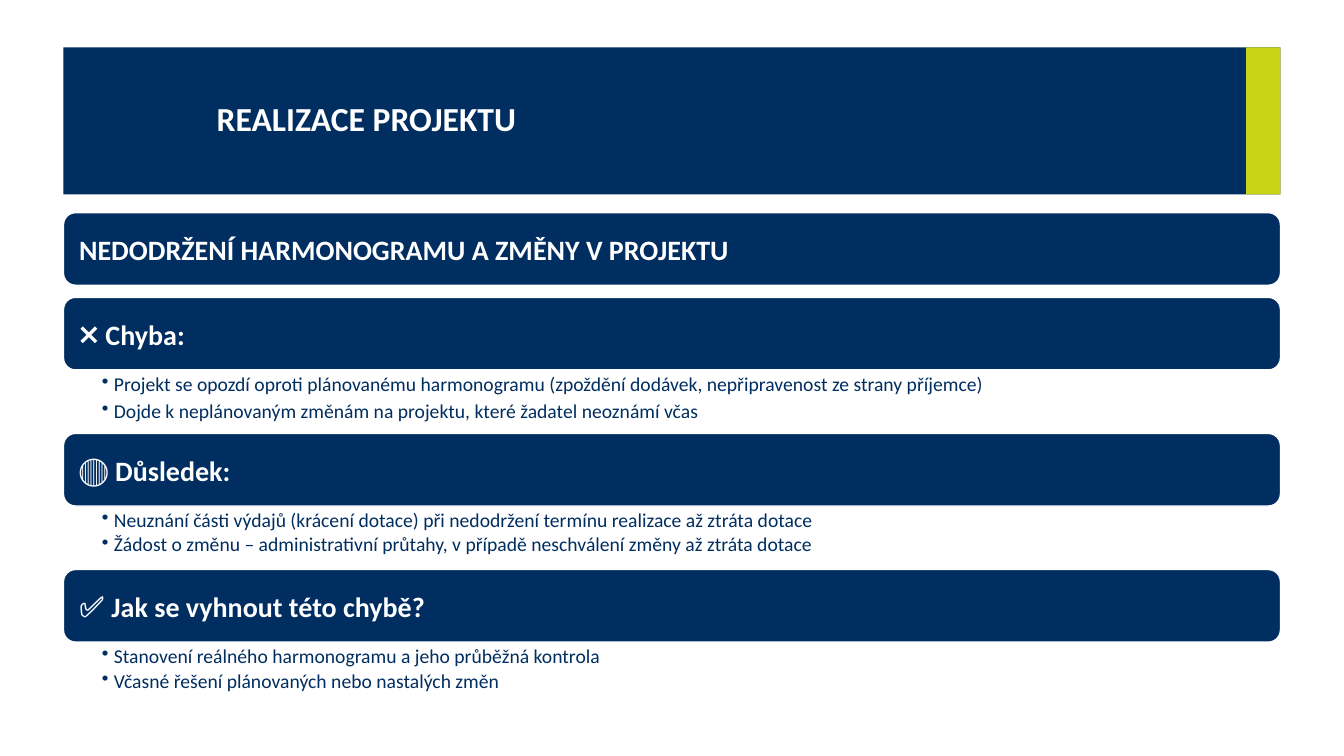
import pptx
import pptx.util
import pptx.dml.color
import pptx.enum.shapes
import pptx.enum.text
import lxml.etree

Inches = pptx.util.Inches
Pt = pptx.util.Pt
SHAPE = pptx.enum.shapes.MSO_SHAPE
COLORS = {"navy": "002E60", "lime": "C9D417", "white": "FFFFFF"}
FONT = "Calibri"
LEFT, WIDTH = 0.63, 12.07
BAR_H, BULLETS_H = 0.72, 0.63

SECTIONS = [
    ("❌ ", "Chyba:", 1, [
        "Projekt se opozdí oproti plánovanému harmonogramu (zpoždění dodávek, nepřipravenost ze strany příjemce)",
        "Dojde k neplánovaným změnám na projektu, které žadatel neoznámí včas"]),
    ("🔴 ", "Důsledek:", 0.9, [
        "Neuznání části výdajů (krácení dotace) při nedodržení termínu realizace až ztráta dotace",
        "Žádost o změnu – administrativní průtahy, v případě neschválení změny až ztráta dotace"]),
    ("✅ ", "Jak se vyhnout této chybě?", 0.9, [
        "Stanovení reálného harmonogramu a jeho průběžná kontrola",
        "Včasné řešení plánovaných nebo nastalých změn"]),
]


def rgb(name):
    return pptx.dml.color.RGBColor.from_string(COLORS[name])


def add_run(p, text, size, color="white", bold=True):
    r = p.add_run()
    r.text = text
    r.font.name = FONT
    r.font.size = Pt(size)
    r.font.bold = bold
    r.font.color.rgb = rgb(color)


def set_frame(sp, left, top, right, bottom, anchor):
    tf = sp.text_frame
    tf.word_wrap = True
    tf.margin_left, tf.margin_top = Inches(left), Inches(top)
    tf.margin_right, tf.margin_bottom = Inches(right), Inches(bottom)
    tf.vertical_anchor = anchor
    return tf


def add_block(s, kind, x, y, w, h, fill, line=None):
    sp = s.shapes.add_shape(kind, Inches(x), Inches(y), Inches(w), Inches(h))
    sp.shadow.inherit = False
    sp.fill.solid()
    sp.fill.fore_color.rgb = rgb(fill)
    if line:
        sp.line.color.rgb = rgb(line)
        sp.line.width = Pt(1)
    else:
        sp.line.fill.background()
    return sp


def add_title(s, x, y, w, h, text):
    accent_w = 0.34
    sp = add_block(s, SHAPE.RECTANGLE, x, y, w, h, "navy")
    add_block(s, SHAPE.RECTANGLE, x + w - accent_w, y, accent_w, h, "lime")
    tf = set_frame(sp, 1.52, 0, 0.59, 0, pptx.enum.text.MSO_ANCHOR.MIDDLE)
    p = tf.paragraphs[0]
    p.alignment = pptx.enum.text.PP_ALIGN.LEFT
    p.line_spacing = 0.9
    add_run(p, text, 24)


def add_bar(s, x, y, w, h, text, icon=None):
    sp = add_block(s, SHAPE.ROUNDED_RECTANGLE, x, y, w, h, "navy", "white")
    tf = set_frame(sp, 0.12, 0.09, 0.12, 0.09, pptx.enum.text.MSO_ANCHOR.MIDDLE)
    p = tf.paragraphs[0]
    p.alignment = pptx.enum.text.PP_ALIGN.LEFT
    if icon:
        add_run(p, icon, 21)
    add_run(p, text, 20)


def add_bullets(s, x, y, w, h, items, last_spacing):
    sp = s.shapes.add_textbox(Inches(x), Inches(y), Inches(w), Inches(h))
    tf = set_frame(sp, 0.38, 0.02, 0.11, 0.02, pptx.enum.text.MSO_ANCHOR.TOP)
    for i, item in enumerate(items):
        p = tf.paragraphs[0] if i == 0 else tf.add_paragraph()
        p.line_spacing = last_spacing if i == len(items) - 1 else 1
        p.space_after = Pt(2.5)
        pPr = p._p.get_or_add_pPr()
        pPr.set("marL", str(Inches(0.12)))
        pPr.set("indent", str(-Inches(0.12)))
        bullet = lxml.etree.SubElement(pPr, pptx.oxml.ns.qn("a:buChar"))
        bullet.set("char", "•")
        add_run(p, item, 14, "navy", False)


def add_section(s, x, y, w, section):
    icon, heading, last_spacing, items = section
    add_bar(s, x, y, w, BAR_H, heading, icon)
    add_bullets(s, x, y + BAR_H, w, BULLETS_H, items, last_spacing)


def main():
    prs = pptx.Presentation()
    prs.slide_width, prs.slide_height = Inches(13.33), Inches(7.5)
    s = prs.slides.add_slide(prs.slide_layouts[6])
    add_title(s, LEFT, 0.47, WIDTH, 1.46, "REALIZACE PROJEKTU")
    add_bar(s, LEFT, 2.11, WIDTH, BAR_H, "NEDODRŽENÍ HARMONOGRAMU A ZMĚNY V PROJEKTU")
    for i, section in enumerate(SECTIONS):
        add_section(s, LEFT, 2.95 + i * (BAR_H + BULLETS_H), WIDTH, section)
    prs.save("out.pptx")


if __name__ == "__main__":
    main()
